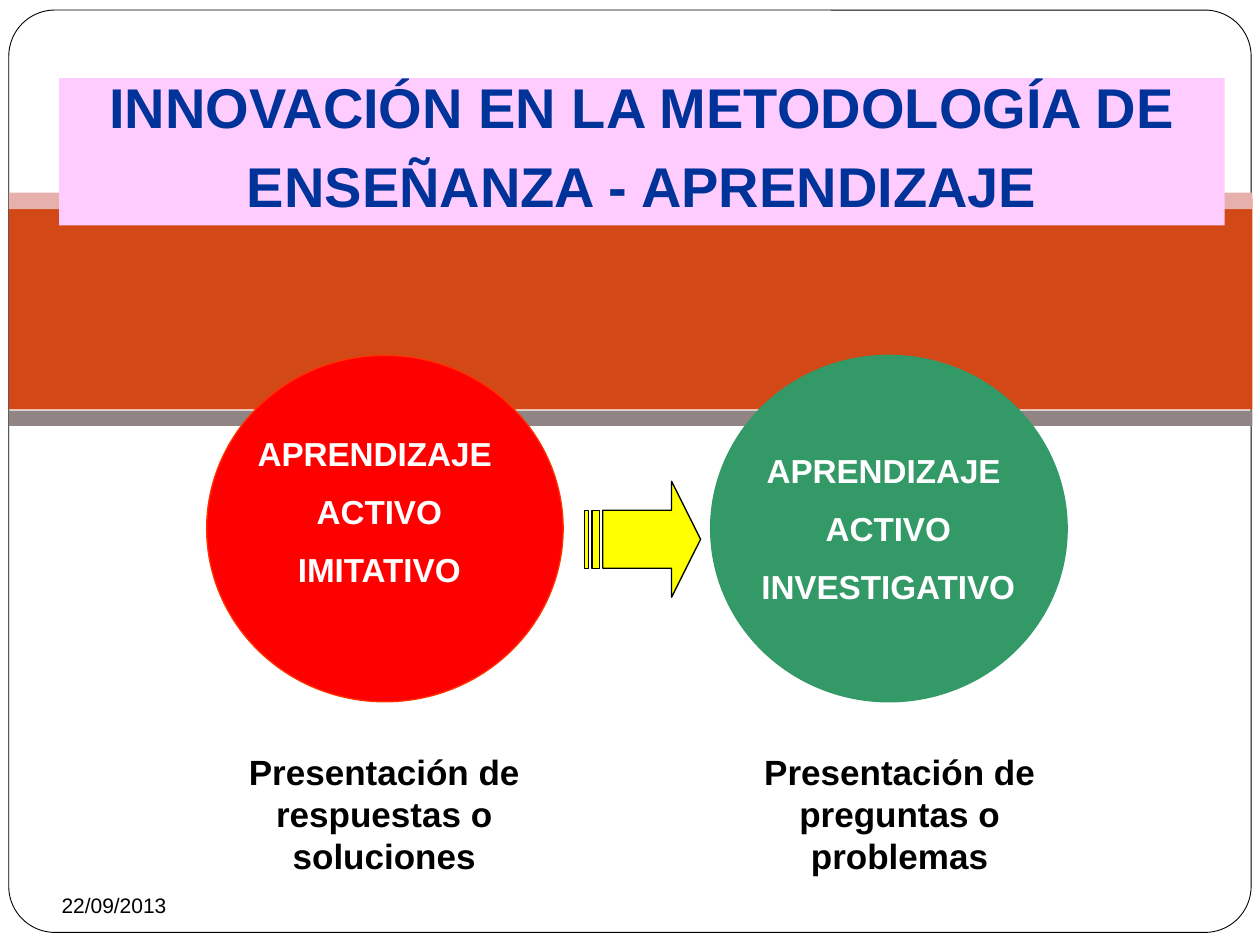
import pptx
import pptx.util
import pptx.dml.color
import pptx.enum.shapes
import pptx.enum.text

Inches = pptx.util.Inches
Pt = pptx.util.Pt
RGB = pptx.dml.color.RGBColor
KIND = pptx.enum.shapes.MSO_SHAPE
ALIGN = pptx.enum.text.PP_ALIGN
MIDDLE = pptx.enum.text.MSO_ANCHOR.MIDDLE

WHITE = RGB(0xFF, 0xFF, 0xFF)
BLACK = RGB(0, 0, 0)
ORANGE = RGB(0xD3, 0x48, 0x17)
ROSE = RGB(0xE6, 0xB1, 0xAC)
GRAY = RGB(0x91, 0x84, 0x85)
PINK = RGB(0xFF, 0xCC, 0xFF)
NAVY = RGB(0, 0x33, 0x99)
RED = RGB(0xFF, 0, 0)
EDGE = RGB(0xFF, 0x33, 0)
GREEN = RGB(0x33, 0x99, 0x66)
YELLOW = RGB(0xFF, 0xFF, 0)

TITLE = ["INNOVACIÓN EN LA METODOLOGÍA DE", "ENSEÑANZA - APRENDIZAJE"]
DATE = "22/09/2013"
BANDS = [(1.58, 1.67, ORANGE), (1.53, 0.13, ROSE), (3.26, 0.12, GRAY)]
MODELS = [
    {"left": 1.64, "fill": RED, "line": EDGE,
     "name": ["APRENDIZAJE ", "ACTIVO", "IMITATIVO"], "box": (1.8, 3.38, 2.42, 1.36),
     "note": "Presentación de respuestas o soluciones", "side": 1.55},
    {"left": 5.64, "fill": GREEN, "line": GREEN,
     "name": ["APRENDIZAJE ", "ACTIVO", "INVESTIGATIVO"], "box": (5.8, 3.51, 2.5, 1.36),
     "note": "Presentación de preguntas o problemas", "side": 5.64},
]

deck = pptx.Presentation()
deck.slide_width, deck.slide_height = Inches(10), Inches(7.5)
slide = deck.slides.add_slide(deck.slide_layouts[6])


def add_form(kind, box, fill, line=None, width=0.75):
    form = slide.shapes.add_shape(kind, *map(Inches, box))
    form.shadow.inherit = False
    form.fill.solid()
    form.fill.fore_color.rgb = fill
    if line is None:
        form.line.fill.background()
    else:
        form.line.color.rgb = line
        form.line.width = Pt(width)
    return form


def set_text(form, lines, size, color, gap=0, bold=True, wrap=True,
             align=ALIGN.CENTER, pitch=None):
    frame = form.text_frame
    frame.text = "\n".join(lines)
    frame.word_wrap = wrap
    frame.vertical_anchor = MIDDLE
    for index, para in enumerate(frame.paragraphs):
        para.alignment = align
        para.line_spacing = pitch
        para.space_before = Pt(gap if index else 0)
        for run in para.runs:
            run.font.name = "Arial"
            run.font.size = Pt(size)
            run.font.bold = bold
            run.font.color.rgb = color


def add_text(box, lines, size, color, **style):
    set_text(slide.shapes.add_textbox(*map(Inches, box)), lines, size, color, **style)


def main():
    card = add_form(KIND.ROUNDED_RECTANGLE, (0.07, 0.08, 9.86, 7.32), WHITE, BLACK, 0.5)
    card.adjustments[0] = 0.05
    for top, height, color in BANDS:
        add_form(KIND.RECTANGLE, (0.07, top, 9.87, height), color)
    add_text((0.39, 7.03, 1.04, 0.3), [DATE], 12, BLACK,
             bold=False, wrap=False, align=ALIGN.LEFT)
    head = add_form(KIND.RECTANGLE, (0.47, 0.62, 9.25, 1.17), PINK)
    set_text(head, TITLE, 32, NAVY, gap=14.6, pitch=0.8)

    for model in MODELS:
        add_form(KIND.OVAL, (model["left"], 2.82, 2.83, 2.75), model["fill"], model["line"])
        add_text(model["box"], model["name"], 19, WHITE, gap=10.4)
        add_text((model["side"], 5.91, 3, 1.1), [model["note"]], 20, BLACK)

    arrow = add_form(KIND.STRIPED_RIGHT_ARROW, (4.64, 3.82, 0.92, 0.92), YELLOW, BLACK)
    arrow.adjustments[0] = 0.5
    arrow.adjustments[1] = 0.25
    deck.save("out.pptx")


if __name__ == "__main__":
    main()
